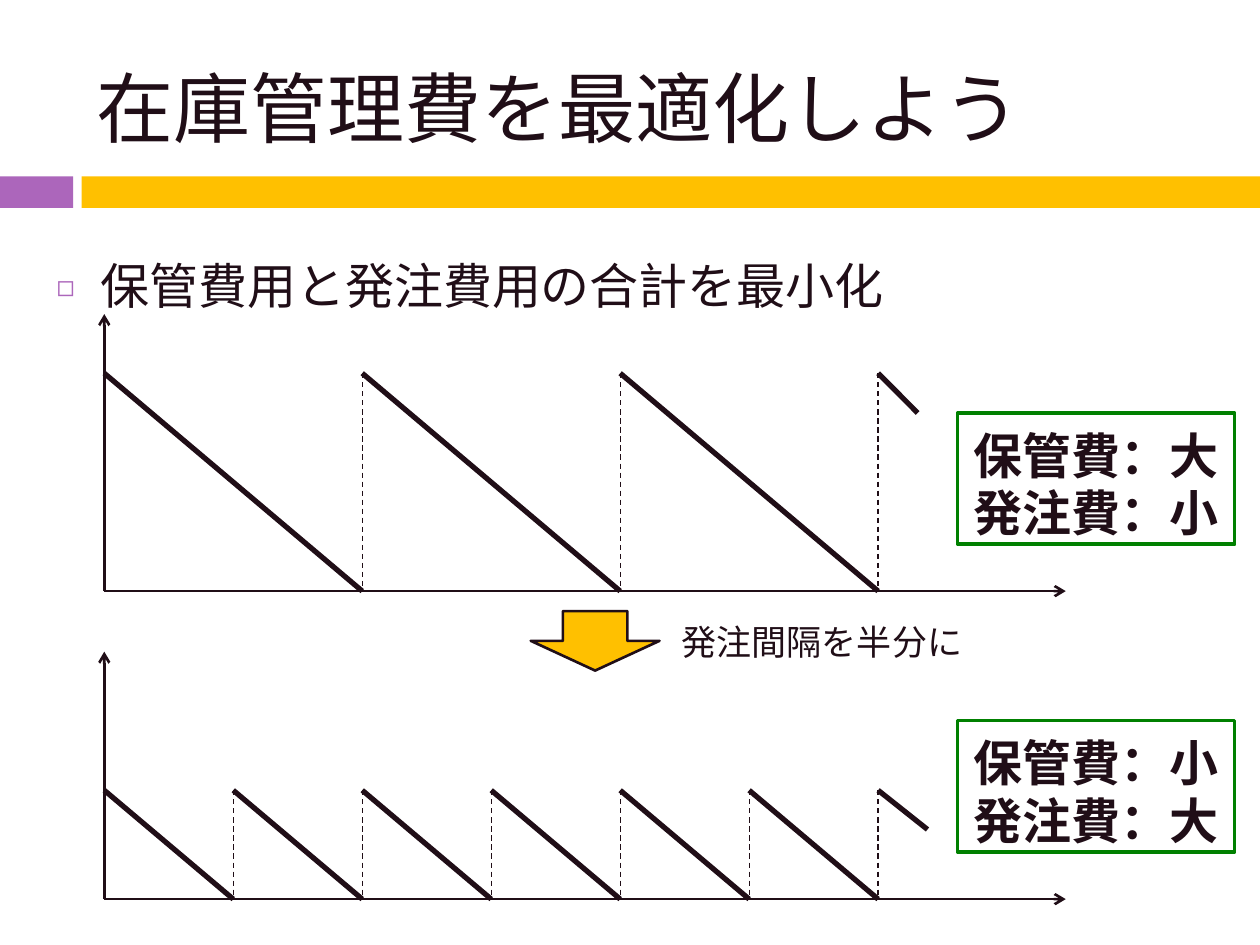
from lxml import etree
from pptx import Presentation
from pptx.dml.color import RGBColor
from pptx.enum.dml import MSO_LINE
from pptx.enum.shapes import MSO_CONNECTOR, MSO_SHAPE
from pptx.enum.text import MSO_ANCHOR, PP_ALIGN
from pptx.oxml.ns import qn
from pptx.util import Pt

RECTANGLE = MSO_SHAPE.RECTANGLE
DOWN_ARROW = MSO_SHAPE.DOWN_ARROW
STRAIGHT = MSO_CONNECTOR.STRAIGHT
DASH = MSO_LINE.DASH
TOP, MIDDLE = MSO_ANCHOR.TOP, MSO_ANCHOR.MIDDLE
LEFT, CENTER = PP_ALIGN.LEFT, PP_ALIGN.CENTER

FONT = "Noto Sans CJK JP"
INK, PURPLE, GOLD = "200E17", "AC66BB", "FFC000"
WHITE, GREEN = "FFFFFF", "008000"

AXIS_LEFT, AXIS_RIGHT = 59.6, 609
SPAN_WIDTH = 442.2


def color(value):
    return RGBColor.from_string(value)


def apply(target, values):
    for name, value in values.items():
        setattr(target, name, value)


def add_child(parent, tag, **attributes):
    return etree.SubElement(parent, qn(tag), attributes)


def write_text(box, lines, size, align=LEFT, anchor=TOP, bold=False, wrap=False):
    shift = 0.11 * size
    frame = box.text_frame
    apply(frame, {
        "word_wrap": wrap,
        "vertical_anchor": anchor,
        "margin_left": Pt(7.2),
        "margin_right": Pt(7.2),
        "margin_top": Pt(3.6 + shift),
        "margin_bottom": Pt(max(0, 3.6 - shift)),
    })
    for index, line in enumerate(lines):
        para = frame.add_paragraph() if index else frame.paragraphs[0]
        apply(para, {"alignment": align, "line_spacing": Pt(round(1.18 * size, 1))})
        span = para.add_run()
        span.text = line
        apply(span.font, {"name": FONT, "size": Pt(size), "bold": bold})
        span.font.color.rgb = color(INK)
        add_child(span.font._element, "a:ea", typeface=FONT)


def add_text(page, place, lines, size, **options):
    box = page.shapes.add_textbox(*map(Pt, place))
    write_text(box, lines, size, **options)
    return box


def add_bullet(para, symbol, fill):
    properties = para._p.get_or_add_pPr()
    apply_indent = {"marL": str(Pt(25.2)), "indent": str(-Pt(25.2))}
    for name, value in apply_indent.items():
        properties.set(name, value)
    holder = add_child(properties, "a:buClr")
    add_child(holder, "a:srgbClr", val=fill)
    add_child(properties, "a:buSzPct", val="60000")
    add_child(properties, "a:buFont", typeface=FONT)
    add_child(properties, "a:buChar", char=symbol)


def add_block(page, kind, place, fill, line=None, width=0):
    block = page.shapes.add_shape(kind, *map(Pt, place))
    block.shadow.inherit = False
    block.fill.solid()
    block.fill.fore_color.rgb = color(fill)
    if line:
        block.line.color.rgb = color(line)
        block.line.width = Pt(width)
    else:
        block.line.fill.background()
    return block


def add_line(page, start, end, width, dash=None, arrow=False):
    line = page.shapes.add_connector(STRAIGHT, *map(Pt, (*start, *end)))
    line.line.color.rgb = color(INK)
    apply(line.line, {"width": Pt(width), "dash_style": dash})
    if arrow:
        add_child(line.line._get_or_add_ln(), "a:tailEnd", type="arrow")
    add_child(line._element.spPr, "a:effectLst")


def add_stock_graph(page, axis_top, peak, base, cycles, last_point):
    origin = (AXIS_LEFT, base)
    add_line(page, origin, (AXIS_LEFT, axis_top), 1.5, arrow=True)
    add_line(page, origin, (AXIS_RIGHT, base), 1.5, arrow=True)
    step = SPAN_WIDTH / cycles
    for cycle in range(cycles):
        start = AXIS_LEFT + cycle * step
        end = start + step
        add_line(page, (end, peak), (end, base), 0.75, dash=DASH)
        add_line(page, (start, peak), (end, base), 3)
    add_line(page, (AXIS_LEFT + SPAN_WIDTH, peak), last_point, 3)


def add_cost_box(page, top, lines):
    box = add_block(page, RECTANGLE, (547.2, top, 158.4, 75), WHITE, GREEN, 2)
    write_text(box, lines, 28, align=CENTER, anchor=MIDDLE, bold=True)


def main():
    deck = Presentation()
    apply(deck, {"slide_width": Pt(720), "slide_height": Pt(540)})
    page = deck.slides.add_slide(deck.slide_layouts[6])

    add_block(page, RECTANGLE, (0, 100.8, 41.8, 18), PURPLE)
    add_block(page, RECTANGLE, (46.6, 100.8, 673.4, 18), GOLD)
    add_text(page, (48, 18, 642, 78), ["在庫管理費を最適化しよう"], 44,
             anchor=MIDDLE, wrap=True)
    body = add_text(page, (25.2, 139.7, 675, 385),
                    ["保管費用と発注費用の合計を最小化"], 28, wrap=True)
    add_bullet(body.text_frame.paragraphs[0], "◻", PURPLE)

    add_stock_graph(page, 179.5, 213.3, 337.8, 3, (524.4, 236))
    add_cost_box(page, 236, ["保管費：大", "発注費：小"])
    add_stock_graph(page, 372.4, 451.6, 513.8, 6, (530, 474))
    add_cost_box(page, 411.8, ["保管費：小", "発注費：大"])

    add_block(page, DOWN_ARROW, (303.3, 349.2, 73.6, 34), GOLD, INK, 1.5)
    add_text(page, (382.5, 349.2, 175.7, 31.5), ["発注間隔を半分に"], 20)

    deck.save("out.pptx")


if __name__ == "__main__":
    main()
